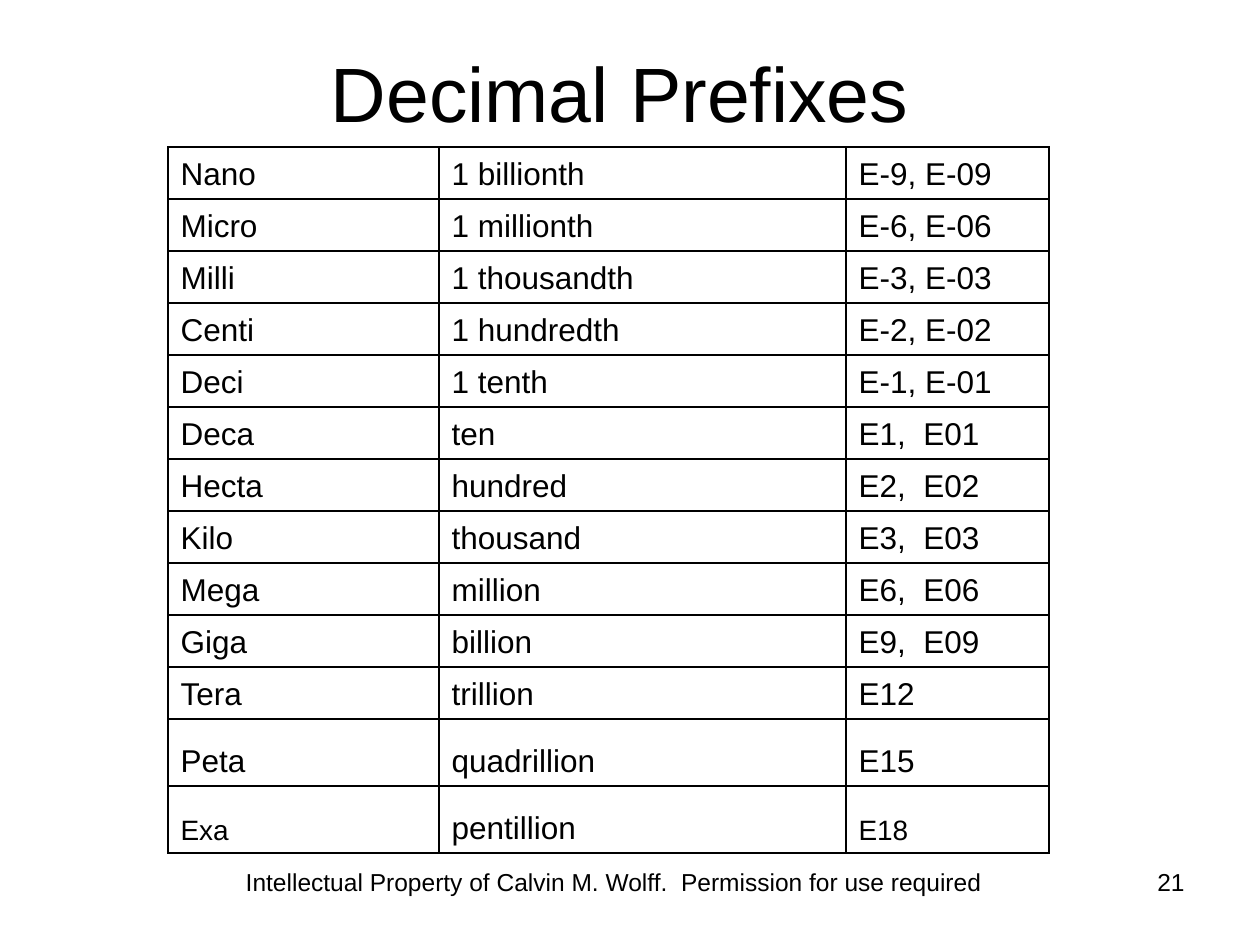
from dataclasses import dataclass

from lxml.etree import SubElement
from pptx import Presentation
from pptx.dml.color import RGBColor
from pptx.enum.text import MSO_ANCHOR as Anchor, PP_ALIGN as Align
from pptx.oxml.ns import qn
from pptx.util import Emu, Pt

EMU_PER_PX = 914400 / 126
BLACK = RGBColor(0x00, 0x00, 0x00)
FONT = "Arial"
COLUMN_WIDTHS = (271, 407, 203)
HANGING_INDENT = 48
BORDER_SIDES = ("a:lnL", "a:lnR", "a:lnT", "a:lnB")


@dataclass(frozen=True)
class Prefix:
    name: str
    meaning: str
    exponent: str
    height: int = 52
    outer_size: int = 18


@dataclass(frozen=True)
class FooterText:
    text: str
    left: int
    width: int
    align: Align


PREFIXES = (
    Prefix("Nano", "1 billionth", "E-9, E-09"),
    Prefix("Micro", "1 millionth", "E-6, E-06"),
    Prefix("Milli", "1 thousandth", "E-3, E-03"),
    Prefix("Centi", "1 hundredth", "E-2, E-02"),
    Prefix("Deci", "1 tenth", "E-1, E-01"),
    Prefix("Deca", "ten", "E1,  E01"),
    Prefix("Hecta", "hundred", "E2,  E02"),
    Prefix("Kilo", "thousand", "E3,  E03"),
    Prefix("Mega", "million", "E6,  E06"),
    Prefix("Giga", "billion", "E9,  E09"),
    Prefix("Tera", "trillion", "E12"),
    Prefix("Peta", "quadrillion", "E15", height=67),
    Prefix("Exa", "pentillion", "E18", height=67, outer_size=16),
)

FOOTERS = (
    FooterText(
        "Intellectual Property of Calvin M. Wolff.  Permission for use required",
        231, 766, Align.CENTER,
    ),
    FooterText("21", 903, 294, Align.RIGHT),
)


def px(length: int) -> Emu:
    return Emu(round(length * EMU_PER_PX))


def add_text(text_frame, text: str, size: int, align: Align = Align.LEFT):
    paragraph = text_frame.paragraphs[0]
    paragraph.alignment = align
    run = paragraph.add_run()
    run.text = text
    run.font.name = FONT
    run.font.size = Pt(size)
    run.font.color.rgb = BLACK
    return paragraph


def add_title(slide, text: str) -> None:
    title = slide.shapes.title
    title.left, title.top = px(53), px(32)
    title.width, title.height = px(1134), px(120)
    title.text_frame.vertical_anchor = Anchor.MIDDLE
    add_text(title.text_frame, text, 44, Align.CENTER)


def add_borders(cell) -> None:
    properties = cell._tc.get_or_add_tcPr()
    for side in BORDER_SIDES:
        line = SubElement(properties, qn(side), w=str(Pt(1)))
        fill = SubElement(line, qn("a:solidFill"))
        SubElement(fill, qn("a:srgbClr"), val=str(BLACK))


def fill_cell(cell, text: str, size: int) -> None:
    add_borders(cell)
    cell.fill.background()
    cell.vertical_anchor = Anchor.BOTTOM
    paragraph = add_text(cell.text_frame, text, size)
    properties = paragraph._p.get_or_add_pPr()
    properties.set("marL", str(px(HANGING_INDENT)))
    properties.set("indent", str(-px(HANGING_INDENT)))


def add_prefix_table(slide, prefixes: tuple[Prefix, ...]) -> None:
    frame = slide.shapes.add_table(
        len(prefixes), len(COLUMN_WIDTHS), px(168), px(147),
        px(sum(COLUMN_WIDTHS)), px(sum(prefix.height for prefix in prefixes)),
    )
    table = frame.table
    table.first_row = False
    table.horz_banding = False
    for column, width in zip(table.columns, COLUMN_WIDTHS):
        column.width = px(width)
    for row, prefix in zip(table.rows, prefixes):
        row.height = px(prefix.height)
        name, meaning, exponent = row.cells
        fill_cell(name, prefix.name, prefix.outer_size)
        fill_cell(meaning, prefix.meaning, 18)
        fill_cell(exponent, prefix.exponent, prefix.outer_size)


def add_footer(slide, footer: FooterText) -> None:
    shape = slide.shapes.add_textbox(px(footer.left), px(861), px(footer.width), px(66))
    shape.text_frame.word_wrap = True
    add_text(shape.text_frame, footer.text, 14, footer.align)


def main() -> None:
    presentation = Presentation()
    presentation.slide_width, presentation.slide_height = px(1260), px(945)
    slide = presentation.slides.add_slide(presentation.slide_layouts[5])
    add_title(slide, "Decimal Prefixes")
    add_prefix_table(slide, PREFIXES)
    for footer in FOOTERS:
        add_footer(slide, footer)
    presentation.save("out.pptx")


if __name__ == "__main__":
    main()
